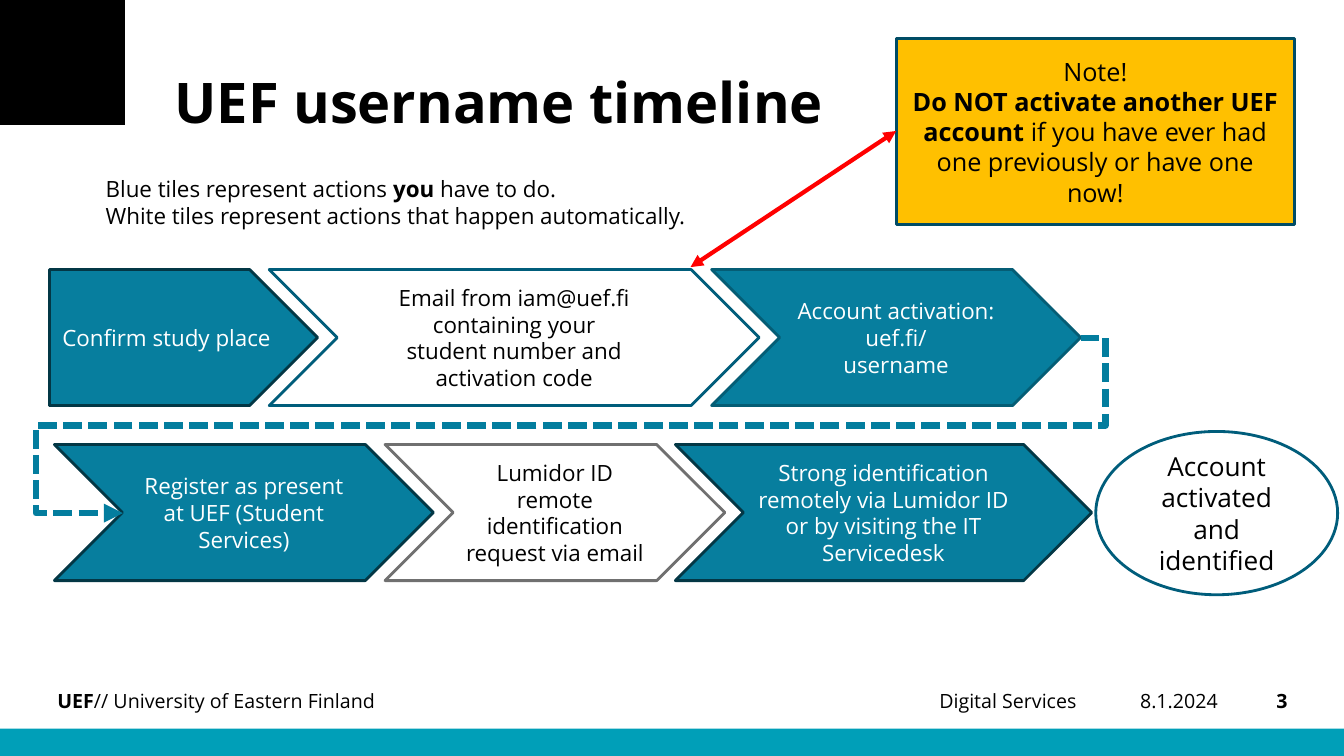
from dataclasses import dataclass

from lxml.etree import SubElement
from pptx import Presentation
from pptx.dml.color import RGBColor
from pptx.enum.dml import MSO_LINE
from pptx.enum.shapes import MSO_CONNECTOR, MSO_SHAPE
from pptx.enum.text import MSO_ANCHOR, MSO_AUTO_SIZE, PP_ALIGN
from pptx.oxml.ns import qn
from pptx.shapes.connector import Connector
from pptx.text.text import TextFrame
from pptx.util import Emu, Inches, Pt

FONT = "Open Sans"
BLACK = RGBColor(0x00, 0x00, 0x00)
WHITE = RGBColor(0xFF, 0xFF, 0xFF)
TEAL = RGBColor(0x00, 0x9F, 0xB8)
BLUE = RGBColor(0x07, 0x7E, 0x9E)
PATH = RGBColor(0x03, 0x7D, 0x9E)
NAVY = RGBColor(0x03, 0x37, 0x45)
DEEP = RGBColor(0x05, 0x5D, 0x75)
EDGE = RGBColor(0x00, 0x5D, 0x7B)
RIM = RGBColor(0x00, 0x4C, 0x65)
GREY = RGBColor(0x70, 0x70, 0x70)
GOLD = RGBColor(0xFF, 0xC0, 0x00)
RED = RGBColor(0xFF, 0x00, 0x00)

# The grid has 100 columns and 100 rows.
WIDTH, HEIGHT = Inches(13.33), Inches(7.5)
TOP, LOW, TALL = 35.65, 58.8, 18
FOOT, LINE = 90.67, 4.13

Box = tuple[float, float, float, float]


@dataclass
class Tile:
    """A filled shape; asterisks in its text switch bold on and off."""
    kind: MSO_SHAPE
    box: Box
    fill: RGBColor
    edge: RGBColor | None = None
    text: str = ""
    ink: RGBColor = BLACK
    size: float = 16
    inset: float = 0.1


@dataclass
class Label:
    box: Box
    text: str
    size: float = 14
    align: PP_ALIGN = PP_ALIGN.RIGHT
    anchor: MSO_ANCHOR = MSO_ANCHOR.MIDDLE


@dataclass
class Link:
    kind: MSO_CONNECTOR
    ends: Box
    color: RGBColor
    width: float
    heads: tuple[str, ...]


ARROW, PLATE = MSO_SHAPE.CHEVRON, MSO_SHAPE.PENTAGON
TILES = [
    Tile(MSO_SHAPE.RECTANGLE, (0, 96.4, 100, 3.6), TEAL),
    Tile(MSO_SHAPE.RECTANGLE, (0, 0, 9.3, 16.53), BLACK),
    Tile(PLATE, (3.68, TOP, 19.95, TALL), BLUE, NAVY, "Confirm study place", WHITE),
    Tile(ARROW, (4.05, LOW, 28.2, TALL), BLUE, NAVY,
         "Register as present at UEF (Student Services)", WHITE, inset=0.12),
    Tile(ARROW, (52.95, TOP, 27.45, TALL), BLUE, DEEP,
         "Account activation:\nuef.fi/\vusername", WHITE, inset=0.12),
    Tile(ARROW, (20.03, TOP, 36.45, TALL), WHITE, EDGE,
         "Email from iam@uef.fi containing your\nstudent number and\nactivation code"),
    Tile(MSO_SHAPE.RECTANGLE, (66.68, 5.07, 29.63, 24.67), GOLD, RIM,
         "Note!\n*Do NOT activate another UEF account *if you have ever had "
         "one previously or have one now!", size=18),
    Tile(ARROW, (50.25, LOW, 30.98, TALL), BLUE, NAVY,
         "Strong identification remotely via Lumidor ID or by visiting "
         "the IT Servicedesk", WHITE),
    Tile(ARROW, (28.65, LOW, 25.28, TALL), WHITE, GREY,
         "Lumidor ID remote identification request via email"),
    Tile(MSO_SHAPE.OVAL, (81.53, 57.07, 18, 21.6), WHITE, EDGE,
         "Account activated and identified", size=18.7),
]
LABELS = [
    Label((29.55, FOOT, 51.3, LINE), "Digital Services"),
    Label((81.98, FOOT, 9.38, LINE), "8.1.2024"),
    Label((91.43, FOOT, 5.1, LINE), "*3"),
    Label((7.13, 22.53, 45, 8.53),
          "Blue tiles represent actions *you* have to do.\n"
          "White tiles represent actions that happen automatically.",
          16, PP_ALIGN.LEFT, MSO_ANCHOR.TOP),
]
BRAND = Label((3.53, FOOT, 38.55, LINE), "*UEF*/**/ University of Eastern Finland",
              align=PP_ALIGN.LEFT)
NOTE = Link(MSO_CONNECTOR.STRAIGHT, (66.68, 17.33, 51.38, 35.33), RED, 3,
            ("headEnd", "tailEnd"))
TURN = Link(MSO_CONNECTOR.ELBOW, (80.4, 44.67, 9.15, 67.87), PATH, 4.5, ("tailEnd",))
BENDS = (-2630, 50000, 109100)


def place(box: Box) -> list[Emu]:
    """Turn columns and rows into slide lengths."""
    return [Emu(round(part * side / 100))
            for part, side in zip(box, (WIDTH, HEIGHT) * 2)]


def write(frame: TextFrame, text: str, size: float, ink: RGBColor,
          align: PP_ALIGN, anchor: MSO_ANCHOR) -> None:
    frame.word_wrap = True
    frame.vertical_anchor = anchor
    for i, line in enumerate(text.split("\n")):
        para = frame.add_paragraph() if i else frame.paragraphs[0]
        para.alignment = align
        first, *rest = line.split("*")
        para.text = first
        for j, part in enumerate(rest):
            if part:
                run = para.add_run()
                run.text = part
                run.font.bold = j % 2 == 0
        for run in para.runs:
            run.font.name, run.font.size = FONT, Pt(size)
            run.font.color.rgb = ink


def draw(shapes, tile: Tile) -> None:
    shape = shapes.add_shape(tile.kind, *place(tile.box))
    shape.shadow.inherit = False
    shape.fill.solid()
    shape.fill.fore_color.rgb = tile.fill
    if tile.edge is None:
        shape.line.fill.background()
    else:
        shape.line.color.rgb = tile.edge
        shape.line.width = Pt(2)
    if tile.text:
        frame = shape.text_frame
        frame.margin_left = frame.margin_right = Inches(tile.inset)
        frame.margin_top = frame.margin_bottom = Inches(tile.inset / 2)
        write(frame, tile.text, tile.size, tile.ink, PP_ALIGN.CENTER, MSO_ANCHOR.MIDDLE)


def label(shapes, item: Label) -> TextFrame:
    frame = shapes.add_textbox(*place(item.box)).text_frame
    write(frame, item.text, item.size, BLACK, item.align, item.anchor)
    return frame


def join(shapes, link: Link) -> Connector:
    wire = shapes.add_connector(link.kind, *place(link.ends))
    wire.line.color.rgb = link.color
    wire.line.width = Pt(link.width)
    for head in link.heads:
        SubElement(wire.line._get_or_add_ln(), qn(f"a:{head}"), type="triangle")
    SubElement(wire._element.spPr, qn("a:effectLst"))
    return wire


def bend(wire: Connector) -> None:
    """Give the elbow five segments, dashed."""
    wire.line.dash_style = MSO_LINE.SQUARE_DOT
    shape = wire._element.spPr.find(qn("a:prstGeom"))
    shape.set("prst", "bentConnector5")
    guides = shape.find(qn("a:avLst"))
    for i, value in enumerate(BENDS, 1):
        SubElement(guides, qn("a:gd"), name=f"adj{i}", fmla=f"val {value}")


def main() -> None:
    deck = Presentation()
    deck.slide_width, deck.slide_height = WIDTH, HEIGHT
    shapes = deck.slides.add_slide(deck.slide_layouts[5]).shapes

    title = shapes.title
    title.left, title.top, title.width, title.height = place((12.23, 9.6, 83.48, 14.67))
    frame = title.text_frame
    write(frame, "*UEF username timeline", 40, BLACK, PP_ALIGN.LEFT, MSO_ANCHOR.TOP)
    frame.auto_size = MSO_AUTO_SIZE.NONE
    frame.paragraphs[0].line_spacing = Pt(40.8)

    slash = label(shapes, BRAND).paragraphs[0].runs[1]
    slash.font._element.set("spc", "-150")
    for tile in TILES:
        draw(shapes, tile)
    for item in LABELS:
        label(shapes, item)
    join(shapes, NOTE)
    bend(join(shapes, TURN))
    deck.save("out.pptx")


if __name__ == "__main__":
    main()
